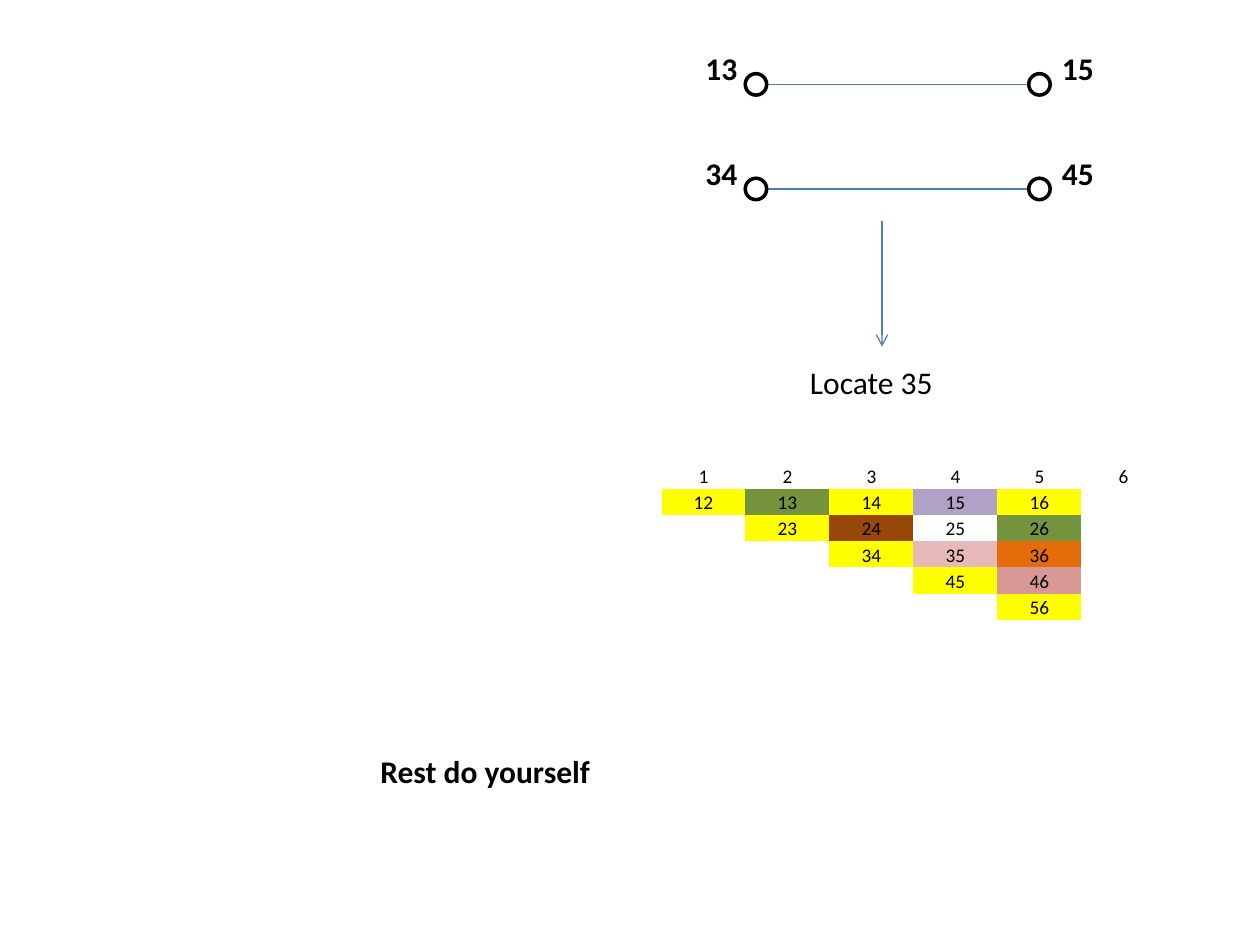
import pptx
import pptx.util
import pptx.dml.color
import pptx.enum.shapes
import pptx.enum.text
import pptx.oxml.ns
from dataclasses import dataclass, field
from lxml import etree

Inches = pptx.util.Inches
Pt = pptx.util.Pt
qn = pptx.oxml.ns.qn


@dataclass(frozen=True)
class Theme:
    font: str = "Calibri"
    label_size: int = 18
    cell_size: int = 11
    ink: str = "000000"
    link: str = "4B7EBC"
    known: str = "FFFF00"
    steps: dict = field(default_factory=lambda: {
        "13": "75923C", "15": "B2A1C7", "24": "974807", "26": "75923C",
        "35": "E6B9B8", "36": "E46D0A", "46": "D99795", "25": None,
    })


THEME = Theme()
NO_GRID_STYLE = "{2D5ABB26-0587-4C30-8999-92F81FD0307C}"
NODE_SIZE = 0.17
LEFT_NODE, RIGHT_NODE = 6, 8.25
STATIONS = 6


def rgb(code):
    return pptx.dml.color.RGBColor.from_string(code)


def apply(target, values):
    for name, value in values.items():
        setattr(target, name, value)


def style_font(font, size, bold=False):
    apply(font, {"name": THEME.font, "size": Pt(size), "bold": bold})
    font.color.rgb = rgb(THEME.ink)


def add_label(slide, text, left, top, width, bold=True, wrap=False):
    label = slide.shapes.add_textbox(Inches(left), Inches(top), Inches(width), Inches(0.4))
    apply(label.text_frame, {
        "text": text,
        "word_wrap": wrap,
        "auto_size": pptx.enum.text.MSO_AUTO_SIZE.SHAPE_TO_FIT_TEXT,
    })
    style_font(label.text_frame.paragraphs[0].runs[0].font, THEME.label_size, bold)


def add_link(slide, start, end, arrow=False):
    link = slide.shapes.add_connector(
        pptx.enum.shapes.MSO_CONNECTOR.STRAIGHT, *map(Inches, (*start, *end)))
    link.line.color.rgb = rgb(THEME.link)
    link.line.width = Pt(0.75)
    if arrow:
        etree.SubElement(link.line._get_or_add_ln(), qn("a:tailEnd"), type="arrow")
    etree.SubElement(link._element.spPr, qn("a:effectLst"))


def add_node(slide, center_x, center_y):
    radius = NODE_SIZE / 2
    node = slide.shapes.add_shape(
        pptx.enum.shapes.MSO_SHAPE.OVAL,
        Inches(center_x - radius), Inches(center_y - radius),
        Inches(NODE_SIZE), Inches(NODE_SIZE))
    node.shadow.inherit = False
    node.fill.background()
    node.line.color.rgb = rgb(THEME.ink)
    node.line.width = Pt(2)


def add_line_pair(slide, first, second, center_y):
    radius = NODE_SIZE / 2
    add_link(slide, (LEFT_NODE + radius, center_y), (RIGHT_NODE - radius, center_y))
    for center_x, text, label_left in ((LEFT_NODE, first, 5.5), (RIGHT_NODE, second, 8.33)):
        add_node(slide, center_x, center_y)
        add_label(slide, text, label_left, center_y - 0.33, 0.46)


def station_text(row, column):
    if row == 0:
        return str(column + 1)
    if row <= column + 1 < STATIONS and column >= row - 1:
        return f"{row}{column + 2}"
    return ""


def fill_cell(cell, text, color):
    apply(cell, {
        "text": text,
        "vertical_anchor": pptx.enum.text.MSO_ANCHOR.BOTTOM,
        "margin_left": Inches(0.01),
        "margin_right": Inches(0.01),
        "margin_top": Inches(0.01),
        "margin_bottom": 0,
    })
    if color:
        cell.fill.solid()
        cell.fill.fore_color.rgb = rgb(color)
    else:
        cell.fill.background()
    paragraph = cell.text_frame.paragraphs[0]
    paragraph.alignment = pptx.enum.text.PP_ALIGN.CENTER
    for run in paragraph.runs:
        style_font(run.font, THEME.cell_size)
    if not text:
        etree.SubElement(paragraph._p, qn("a:endParaRPr"), sz=str(THEME.cell_size * 100))


def add_station_table(slide):
    frame = slide.shapes.add_table(
        STATIONS, STATIONS, Inches(5.25), Inches(3.67), Inches(4), Inches(1.25))
    table = frame.table
    apply(table, {"first_row": False, "horz_banding": False})
    table._tbl.tblPr.find(qn("a:tableStyleId")).text = NO_GRID_STYLE
    for row in range(STATIONS):
        for column in range(STATIONS):
            text = station_text(row, column)
            color = THEME.steps.get(text, THEME.known) if row and text else None
            fill_cell(table.cell(row, column), text, color)


def main():
    deck = pptx.Presentation()
    apply(deck, {"slide_width": Inches(10), "slide_height": Inches(7.5)})
    slide = deck.slides.add_slide(deck.slide_layouts[6])
    add_line_pair(slide, "13", "15", 0.67)
    add_line_pair(slide, "34", "45", 1.5)
    add_link(slide, (7, 1.75), (7, 2.75), arrow=True)
    add_label(slide, "Locate 35", 6.33, 2.83, 1.42, bold=False, wrap=True)
    add_station_table(slide)
    add_label(slide, "Rest do yourself", 2.92, 5.92, 1.88)
    deck.save("out.pptx")


if __name__ == "__main__":
    main()
